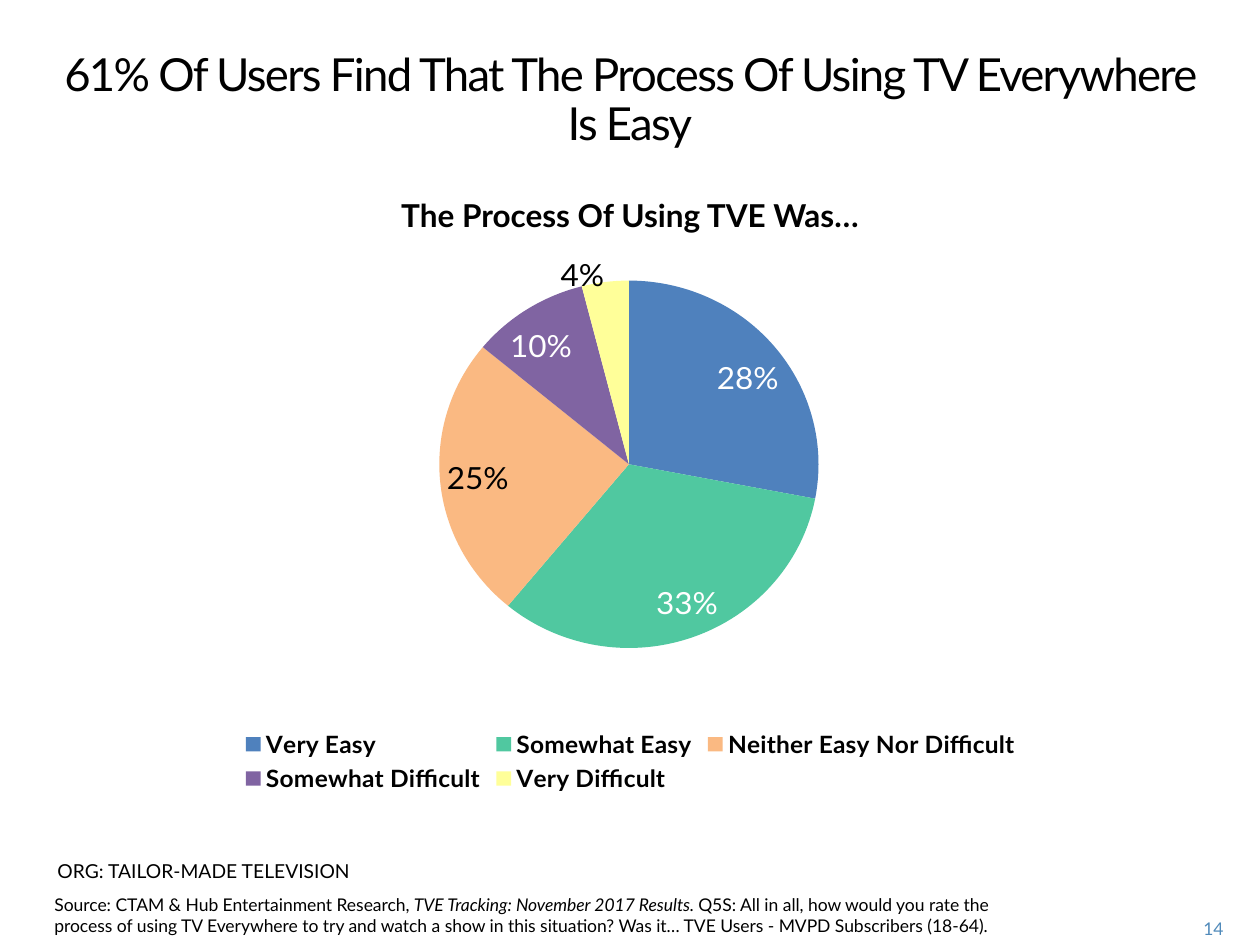
from dataclasses import dataclass

from lxml import etree
from pptx import Presentation
from pptx.chart.data import CategoryChartData
from pptx.dml.color import RGBColor
from pptx.enum.chart import XL_CHART_TYPE, XL_LABEL_POSITION, XL_LEGEND_POSITION
from pptx.enum.text import MSO_ANCHOR, MSO_AUTO_SIZE, PP_ALIGN
from pptx.oxml.ns import qn
from pptx.util import Emu, Pt

PX = 914400 // 126


@dataclass(frozen=True)
class Theme:
    font: str = "Lato"
    black: str = "000000"
    white: str = "FFFFFF"
    page: str = "508ABA"
    title: int = 26
    heading: int = 18
    legend: int = 14
    tag: int = 11
    note: int = 10


@dataclass(frozen=True)
class Box:
    x: int
    y: int
    w: int
    h: int

    def emu(self) -> tuple[Emu, ...]:
        return tuple(Emu(v * PX) for v in (self.x, self.y, self.w, self.h))


@dataclass(frozen=True)
class Slice:
    name: str
    value: float
    fill: str
    label: str


T = Theme()
SLICES = [
    Slice("Very Easy", 0.28, "4F81BD", T.white),
    Slice("Somewhat Easy", 0.33, "50C8A0", T.white),
    Slice("Neither Easy Nor Difficult", 0.25, "FAB982", T.black),
    Slice("Somewhat Difficult", 0.10, "8064A2", T.white),
    Slice("Very Difficult", 0.04, "FFFF99", T.black),
]
PLOT = {"x": 0.316, "y": 0.046, "w": 0.365, "h": 0.678}


def style(font, size: int, color: str = T.black, bold: bool = False) -> None:
    font.name, font.size, font.bold = T.font, Pt(size), bold
    font.color.rgb = RGBColor.from_string(color)


def write(sp, *parts: str, size: int, color: str = T.black, bold: bool = False,
          italic: str = "", align=PP_ALIGN.LEFT, leading: int | None = None,
          tracking: int = 0) -> None:
    """Fill a shape with one paragraph; the part equal to italic is slanted."""
    tf = sp.text_frame
    tf.word_wrap = True
    tf.auto_size = MSO_AUTO_SIZE.NONE
    tf.vertical_anchor = MSO_ANCHOR.TOP
    p = tf.paragraphs[0]
    p.alignment = align
    if leading:
        p.line_spacing = Pt(leading)
    for part in parts:
        r = p.add_run()
        r.text = part
        style(r.font, size, color, bold)
        r.font.italic = part == italic
        if tracking:
            r.font._element.set("spc", str(tracking * 100))


def add_text(s, box: Box, *parts: str, **fmt) -> None:
    write(s.shapes.add_textbox(*box.emu()), *parts, **fmt)


def set_plot_area(chart) -> None:
    """Fix the inner plot area as fractions of the chart."""
    area = chart._chartSpace.chart.plotArea
    for old in area.findall(qn("c:layout")):
        area.remove(old)
    layout = etree.Element(qn("c:layout"))
    manual = etree.SubElement(layout, qn("c:manualLayout"))
    values = {"layoutTarget": "inner", "xMode": "edge", "yMode": "edge", **PLOT}
    for tag, value in values.items():
        etree.SubElement(manual, qn(f"c:{tag}")).set("val", str(value))
    area.insert(0, layout)


def add_pie(s, box: Box, slices: list[Slice]) -> None:
    data = CategoryChartData(number_format="0%")
    data.categories = [sl.name for sl in slices]
    data.add_series("Series 1", [sl.value for sl in slices])
    chart = s.shapes.add_chart(XL_CHART_TYPE.PIE, *box.emu(), data).chart
    chart.has_title = False
    style(chart.font, T.heading)
    set_plot_area(chart)

    chart.has_legend = True
    chart.legend.position = XL_LEGEND_POSITION.BOTTOM
    chart.legend.include_in_layout = False
    style(chart.legend.font, T.legend, bold=True)

    plot = chart.plots[0]
    plot.vary_by_categories = True
    series = plot.series[0]
    labels = series.data_labels
    labels.show_value = True
    labels.show_percentage = False
    labels.number_format = "0%"
    labels.number_format_is_linked = False
    labels.position = XL_LABEL_POSITION.BEST_FIT
    style(labels.font, T.heading)
    for i, sl in enumerate(slices):
        point = series.points[i]
        point.format.fill.solid()
        point.format.fill.fore_color.rgb = RGBColor.from_string(sl.fill)
        if sl.label != T.black:
            style(point.data_label.font, T.heading, sl.label)
            point.data_label.position = XL_LABEL_POSITION.BEST_FIT


def main() -> None:
    prs = Presentation()
    prs.slide_width, prs.slide_height = Emu(1260 * PX), Emu(945 * PX)
    s = prs.slides.add_slide(prs.slide_layouts[5])

    # Title and chart heading
    title = s.shapes.title
    title.left, title.top, title.width, title.height = Box(50, 45, 1160, 92).emu()
    write(title, "61% Of Users Find That The Process Of Using TV Everywhere Is Easy",
          size=T.title, align=PP_ALIGN.CENTER, leading=28, tracking=-1)
    add_text(s, Box(188, 190, 884, 51), "The Process Of Using TVE Was…",
             size=T.heading, bold=True, align=PP_ALIGN.CENTER)

    # Pie chart
    add_pie(s, Box(111, 238, 1039, 560), SLICES)

    # Footer: tag, source and page number
    add_text(s, Box(45, 853, 388, 59), "ORG: TAILOR-MADE TELEVISION", size=T.tag)
    study = "TVE Tracking: November 2017 Results. "
    add_text(s, Box(42, 888, 1020, 33),
             "Source: CTAM & Hub Entertainment Research, ", study,
             "Q5S: All in all, how would you rate the process of using TV Everywhere "
             "to try and watch a show in this situation? Was it… TVE Users - MVPD "
             "Subscribers (18-64).", size=T.note, italic=study)
    add_text(s, Box(1159, 912, 77, 32), "14", size=T.note, color=T.page,
             align=PP_ALIGN.RIGHT)

    prs.save("out.pptx")


if __name__ == "__main__":
    main()
